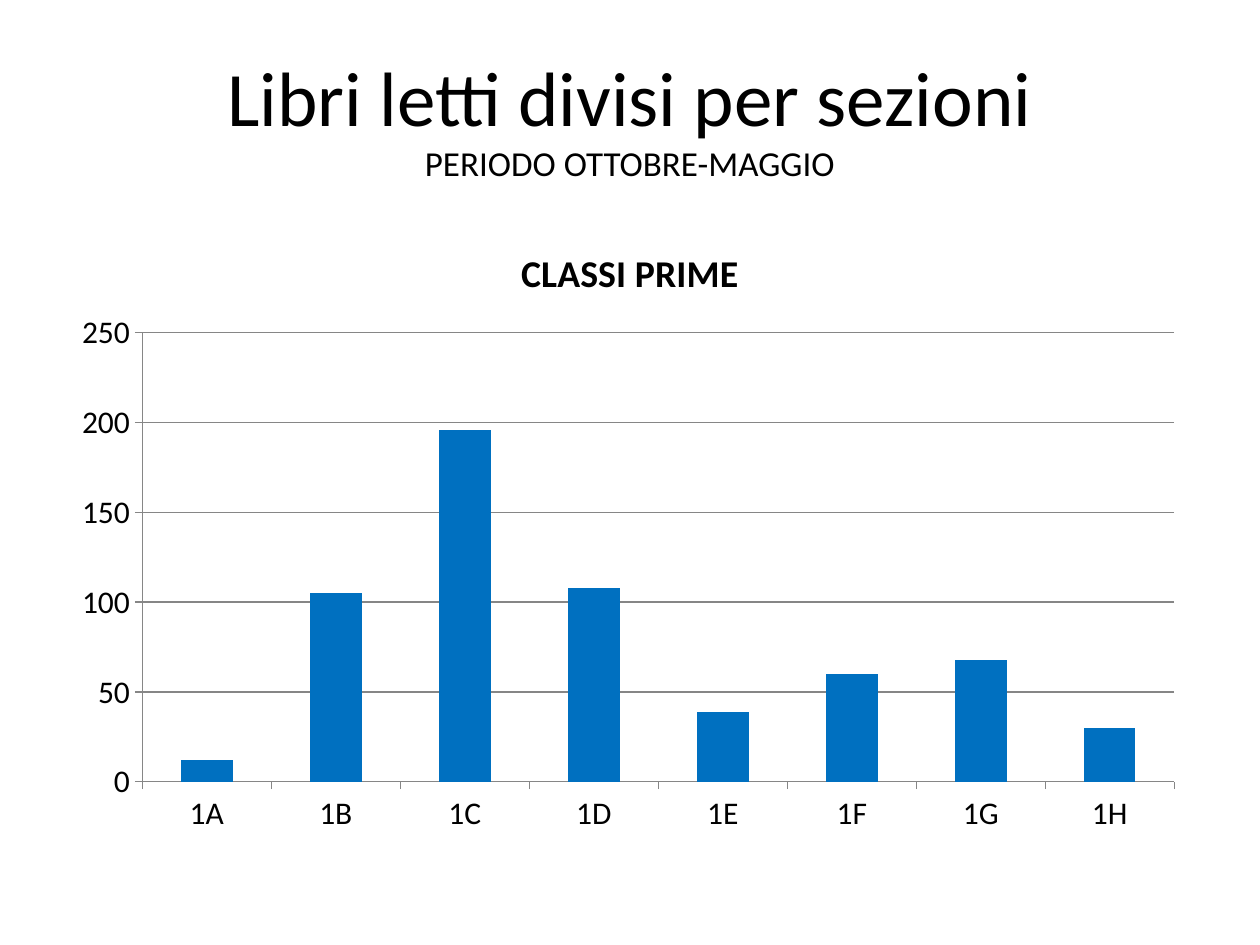
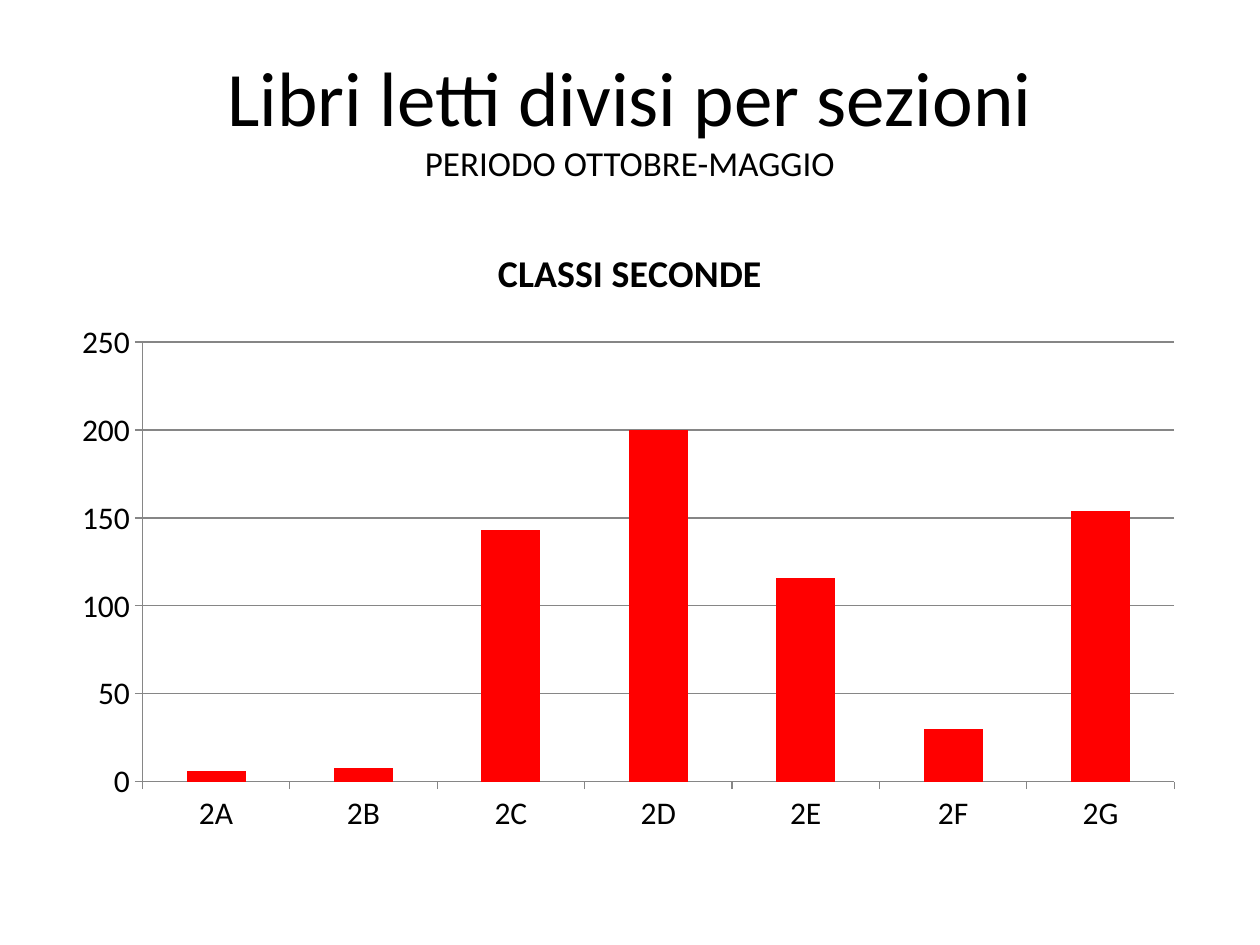
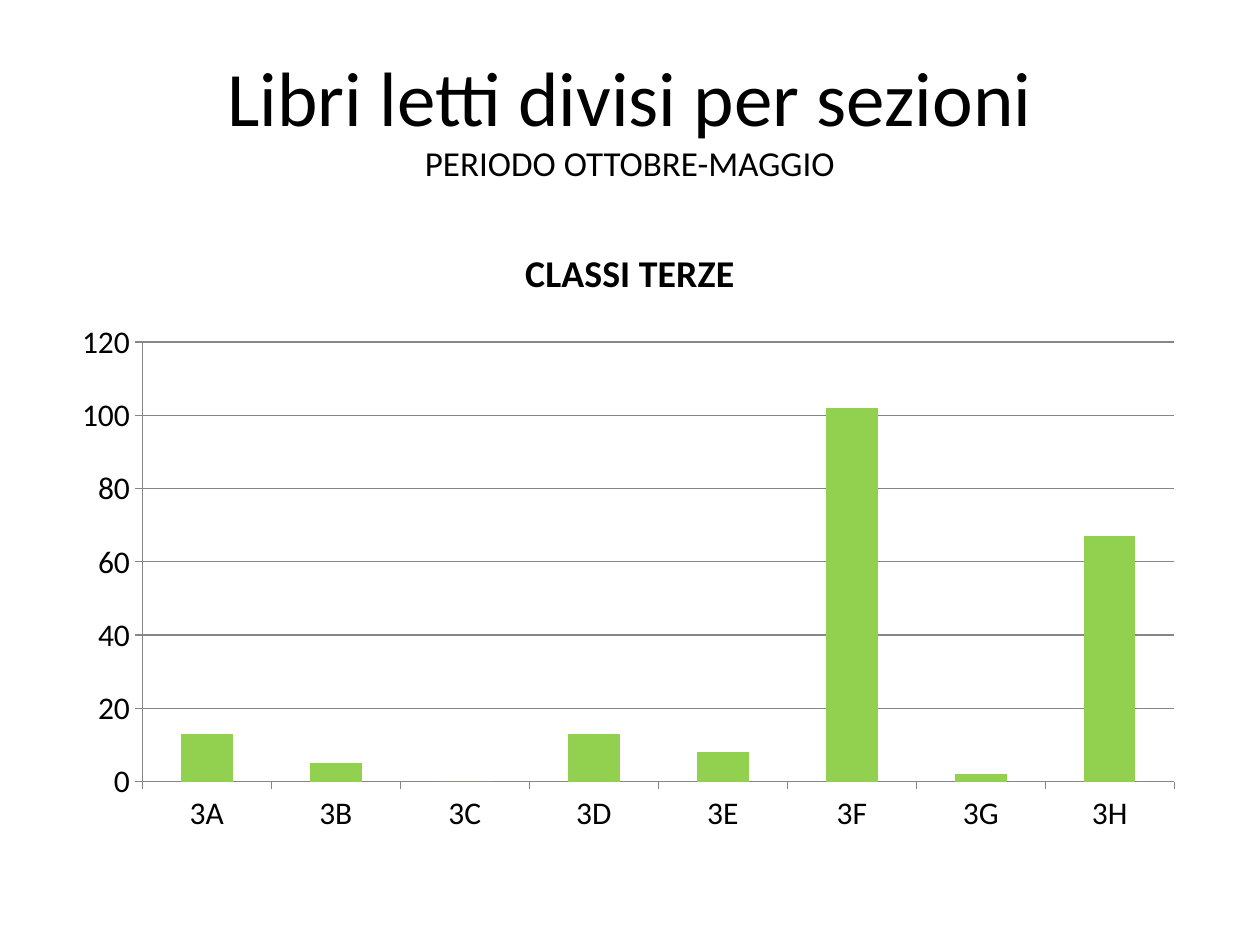
from lxml.etree import SubElement
from pptx import Presentation
from pptx.chart.data import CategoryChartData
from pptx.dml.color import RGBColor
from pptx.enum.chart import XL_CHART_TYPE, XL_TICK_MARK
from pptx.enum.text import MSO_ANCHOR, PP_ALIGN
from pptx.oxml.ns import qn
from pptx.util import Inches, Pt

WIDTH, HEIGHT = Inches(10), Inches(7.5)
FONT, INK, GRID = "Calibri", "000000", "868686"

# Regions as shares of the slide: left, top, width, height
TITLE_BOX = (0.05, 0.04, 0.9, 1 / 6)
CHART_BOX = (0.05, 7 / 30, 0.9, 0.66)

# Plot area as shares of the chart
PLOT_LEFT, PLOT_WIDTH, PLOT_BOTTOM = 0.07, 0.91, 0.9

# Chart title, bar colour, top of the plot, books read by section A, B, C...
CLASSES = [
    ("1", "CLASSI PRIME", "0070C0", 0.18, [12, 105, 196, 108, 39, 60, 68, 30]),
    ("2", "CLASSI SECONDE", "FF0000", 0.195, [6, 8, 143, 200, 116, 30, 154]),
    ("3", "CLASSI TERZE", "92D050", 0.195, [13, 5, 0, 13, 8, 102, 2, 67]),
]


def rgb(value):
    return RGBColor.from_string(value)


def place(box):
    left, top, width, height = box
    return (round(left * WIDTH), round(top * HEIGHT),
            round(width * WIDTH), round(height * HEIGHT))


def format_font(font, size, color=INK, bold=False):
    font.name, font.size, font.bold = FONT, Pt(size), bold
    font.color.rgb = rgb(color)


def add_text(p, text, **style):
    r = p.add_run()
    r.text = text
    format_font(r.font, **style)


def add_title(s, box):
    tf = s.shapes.add_textbox(*place(box)).text_frame
    tf.word_wrap = True
    tf.vertical_anchor = MSO_ANCHOR.MIDDLE
    p = tf.paragraphs[0]
    p.alignment = PP_ALIGN.CENTER
    add_text(p, "Libri letti divisi per sezioni", size=44)
    p.add_line_break()
    add_text(p, "PERIODO OTTOBRE-MAGGIO", size=20)


def format_line(line):
    line.color.rgb = rgb(GRID)
    line.width = Pt(0.75)


def set_plot_layout(chart, top):
    plot_area = chart.plots[0]._element.getparent()
    layout = plot_area.find(qn("c:layout"))
    if layout is None:
        layout = SubElement(plot_area, qn("c:layout"))
        plot_area.insert(0, layout)
    manual = SubElement(layout, qn("c:manualLayout"))
    settings = [("layoutTarget", "inner"), ("xMode", "edge"), ("yMode", "edge"),
                ("x", PLOT_LEFT), ("y", top), ("w", PLOT_WIDTH),
                ("h", round(PLOT_BOTTOM - top, 3))]
    for tag, value in settings:
        SubElement(manual, qn(f"c:{tag}")).set("val", str(value))


def add_class_chart(s, box, year, title, color, plot_top, books):
    data = CategoryChartData()
    data.categories = [year + section for section in "ABCDEFGH"[:len(books)]]
    data.add_series("Series 1", books)
    chart = s.shapes.add_chart(
        XL_CHART_TYPE.COLUMN_CLUSTERED, *place(box), data).chart
    format_font(chart.font, 18)
    chart.has_legend = False

    # Chart title
    chart.has_title = True
    add_text(chart.chart_title.text_frame.paragraphs[0], title,
             size=21.6, bold=True)
    chart.chart_title.include_in_layout = False

    # Columns
    plot = chart.plots[0]
    plot.gap_width = 150
    plot.vary_by_categories = False
    fill = plot.series[0].format.fill
    fill.solid()
    fill.fore_color.rgb = rgb(color)

    # Axes and grid
    for axis in (chart.category_axis, chart.value_axis):
        axis.major_tick_mark = XL_TICK_MARK.OUTSIDE
        axis.minor_tick_mark = XL_TICK_MARK.NONE
        format_line(axis.format.line)
    chart.value_axis.has_major_gridlines = True
    format_line(chart.value_axis.major_gridlines.format.line)
    set_plot_layout(chart, plot_top)


def main():
    prs = Presentation()
    prs.slide_width, prs.slide_height = WIDTH, HEIGHT
    for school_class in CLASSES:
        s = prs.slides.add_slide(prs.slide_layouts[6])
        add_title(s, TITLE_BOX)
        add_class_chart(s, CHART_BOX, *school_class)
    prs.save("out.pptx")


if __name__ == "__main__":
    main()
